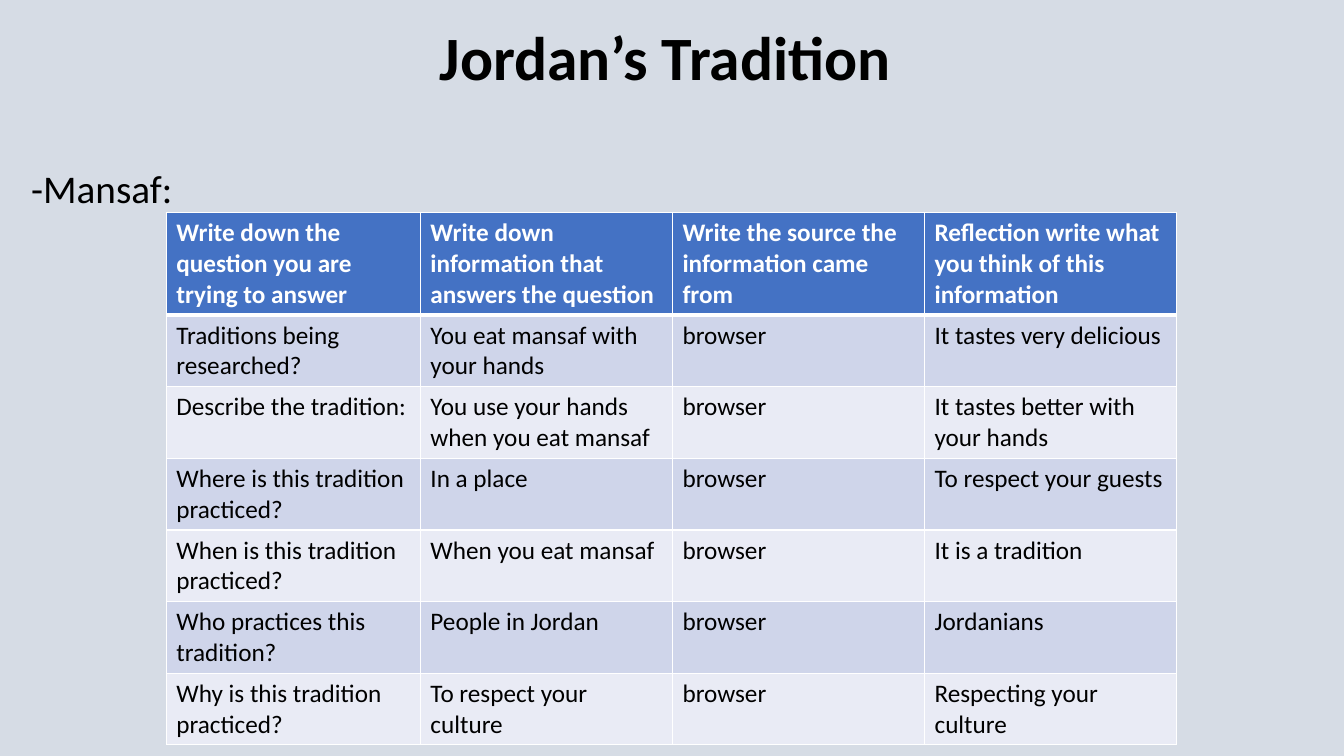
from lxml import etree
from pptx import Presentation
from pptx import util as u
from pptx.dml.color import RGBColor
from pptx.enum import text
from pptx.oxml.ns import qn

THEME = {
    "font": "Calibri", "title": 44, "body": 28, "cell": 18,
    "back": "D6DCE5", "ink": "000000", "line": "FFFFFF",
    "head": "4472C4", "bands": ("CFD5EA", "E9EBF5"),
}
SOURCE = "browser"
ROWS = [
    ("Write down the question you are trying to answer",
     "Write down information that answers the question",
     "Write the source the information came from",
     "Reflection write what you think of this information"),
    ("Traditions being researched?", "You eat mansaf with your hands",
     SOURCE, "It tastes very delicious"),
    ("Describe the tradition:", "You use your hands when you eat mansaf",
     SOURCE, "It tastes better with your hands"),
    ("Where is this tradition practiced?", "In a place",
     SOURCE, "To respect your guests"),
    ("When is this tradition practiced?", "When you eat mansaf",
     SOURCE, "It is a tradition"),
    ("Who practices this tradition?", "People in Jordan",
     SOURCE, "Jordanians"),
    ("Why is this tradition practiced?", "To respect your culture",
     SOURCE, "Respecting your culture"),
]
COLS = [2.52, 2.5, 2.5, 2.5]
HEIGHTS = [1.01] + [0.71] * (len(ROWS) - 1)


def style(p, size, color, bold=False):
    for r in p.runs:
        r.font.name = THEME["font"]
        r.font.size = u.Pt(size)
        r.font.bold = bold
        r.font.color.rgb = RGBColor.from_string(color)


def place(sp, left, top, width, height):
    sp.left, sp.top = u.Inches(left), u.Inches(top)
    sp.width, sp.height = u.Inches(width), u.Inches(height)


prs = Presentation()
prs.slide_width, prs.slide_height = u.Inches(13.33), u.Inches(7.5)
s = prs.slides.add_slide(prs.slide_layouts[1])
s.background.fill.solid()
s.background.fill.fore_color.rgb = RGBColor.from_string(THEME["back"])

# Title
title = s.shapes.title
place(title, 0.92, 0.19, 11.5, 0.83)
tf = title.text_frame
tf.text = "Jordan’s Tradition "
tf.vertical_anchor = text.MSO_ANCHOR.MIDDLE
tf.auto_size = text.MSO_AUTO_SIZE.NONE
p = tf.paragraphs[0]
p.alignment = text.PP_ALIGN.CENTER
p.line_spacing = 0.9
style(p, THEME["title"], THEME["ink"], bold=True)

# Dish name, without a bullet
body = s.placeholders[1]
place(body, 0.21, 1.63, 12.92, 5.69)
tf = body.text_frame
tf.text = "-Mansaf:"
tf.auto_size = text.MSO_AUTO_SIZE.NONE
p = tf.paragraphs[0]
p.line_spacing = 0.9
p.space_before = u.Pt(0)
pPr = p._p.get_or_add_pPr()
pPr.set("marL", "0")
pPr.set("indent", "0")
etree.SubElement(pPr, qn("a:buNone"))
style(p, THEME["body"], THEME["ink"])

# Research table
table = s.shapes.add_table(
    len(ROWS), len(COLS), u.Inches(1.65), u.Inches(2.11),
    u.Inches(sum(COLS)), u.Inches(sum(HEIGHTS))).table
for column, width in zip(table.columns, COLS):
    column.width = u.Inches(width)
for i, (row, height) in enumerate(zip(ROWS, HEIGHTS)):
    table.rows[i].height = u.Inches(height)
    header = i == 0
    fill = THEME["head"] if header else THEME["bands"][(i - 1) % 2]
    for j, words in enumerate(row):
        cell = table.cell(i, j)
        cell.text = words
        style(cell.text_frame.paragraphs[0], THEME["cell"],
              THEME["line"] if header else THEME["ink"], bold=header)
        # Borders come before the fill in the cell properties
        tcPr = cell._tc.get_or_add_tcPr()
        for side in "LRTB":
            thick = (header and side == "B") or (i == 1 and side == "T")
            ln = etree.SubElement(tcPr, qn("a:ln" + side),
                                  w=str(u.Pt(3 if thick else 1)))
            paint = etree.SubElement(ln, qn("a:solidFill"))
            etree.SubElement(paint, qn("a:srgbClr"), val=THEME["line"])
        cell.fill.solid()
        cell.fill.fore_color.rgb = RGBColor.from_string(fill)

prs.save("out.pptx")
